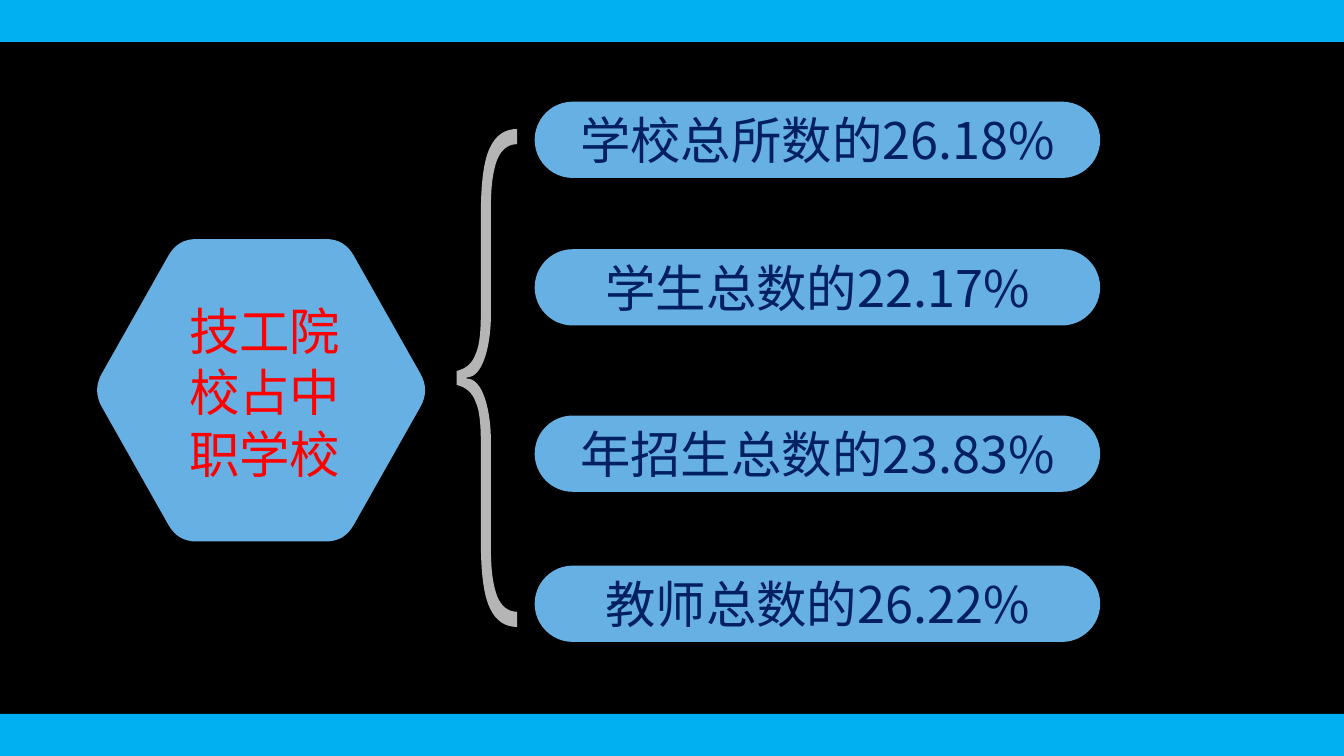
import lxml.etree
import pptx
import pptx.dml.color
import pptx.enum.shapes
import pptx.enum.text
import pptx.oxml.ns
import pptx.util

Pt = pptx.util.Pt
qn = pptx.oxml.ns.qn
SHAPES = pptx.enum.shapes.MSO_SHAPE
SLIDE_WIDTH, SLIDE_HEIGHT = 960, 540
FONT = "Noto Sans CJK SC"
COLOURS = {
    "background": "000000",
    "bar": "00B0F0",
    "panel": "67B0E3",
    "brace": "B5B5B5",
    "topic": "FF0000",
    "share": "002060",
}
SHARES = [
    (72.6, "学校总所数的26.18%"),
    (178, "学生总数的22.17%"),
    (296.8, "年招生总数的23.83%"),
    (404, "教师总数的26.22%"),
]
# Upper half of the brace: distance from its left edge, height above its middle.
# A segment of one point is a line; one of three is a cubic curve.
BRACE_START = (7.2, 0.4)
BRACE_HALF = [
    ((19.4, 0.4), (24.5, 25), (24.5, 45.4)),
    ((24.5, 123),),
    ((24.5, 137), (26, 148), (28.8, 155.5)),
    ((31.7, 163), (36.7, 167), (43.2, 167)),
    ((43.2, 177.85),),
    ((34.6, 177.85), (28, 173.5), (23.8, 164.5)),
    ((19.4, 155.5), (17.3, 140), (17.3, 116.6)),
    ((17.3, 49),),
    ((17.3, 34), (16.6, 24), (13.7, 17.5)),
    ((11.5, 11), (7.2, 6.7), (0, 5)),
]


def rgb(name):
    return pptx.dml.color.RGBColor.from_string(COLOURS[name])


def paint(shape, colour):
    shape.shadow.inherit = False
    shape.fill.solid()
    shape.fill.fore_color.rgb = rgb(colour)
    shape.line.fill.background()


def write(shape, text, colour, **frame_values):
    frame = shape.text_frame
    for name, value in {"word_wrap": True, **frame_values}.items():
        setattr(frame, name, value)
    paragraph = frame.paragraphs[0]
    paragraph.alignment = pptx.enum.text.PP_ALIGN.CENTER
    run = paragraph.add_run()
    run.text = text
    for name, value in {"name": FONT, "size": Pt(36)}.items():
        setattr(run.font, name, value)
    run.font.color.rgb = rgb(colour)
    east_asian = lxml.etree.Element(qn("a:ea"), typeface=FONT)
    run.font._element.find(qn("a:latin")).addnext(east_asian)
    return paragraph


def between(start, end, share):
    return tuple(a + (b - a) * share for a, b in zip(start, end))


def quadratic(start, control, end):
    """Return a curve with one control point as a cubic segment."""
    return between(start, control, 2 / 3), between(end, control, 2 / 3), end


def add_outline(slide, start, segments, colour):
    """Draw a closed outline of lines and cubic curves."""
    builder = slide.shapes.build_freeform(Pt(start[0]), Pt(start[1]))
    builder.add_line_segments(
        [(Pt(x), Pt(y)) for x, y in (segment[-1] for segment in segments)])
    shape = builder.convert_to_shape()
    lines = list(shape._element.iter(qn("a:lnTo")))
    for line, segment in zip(lines, segments):
        if len(segment) == 3:
            curve = lxml.etree.Element(qn("a:cubicBezTo"))
            for x, y in segment:
                lxml.etree.SubElement(curve, qn("a:pt"), x=str(Pt(x) - shape.left),
                                      y=str(Pt(y) - shape.top))
            line.getparent().replace(line, curve)
    paint(shape, colour)


def add_bars(slide, height):
    for top in (SLIDE_HEIGHT - height, 0):
        bar = slide.shapes.add_shape(
            SHAPES.RECTANGLE, 0, Pt(top), Pt(SLIDE_WIDTH), Pt(height))
        paint(bar, "bar")


def add_topic(slide, left, top, width, height):
    """Draw the hexagon with rounded corners and its label."""
    slant, middle = 61, top + height / 2
    right, bottom = left + width, top + height
    corners = [
        (left, middle), (left + slant, top), (right - slant, top),
        (right, middle), (right - slant, bottom), (left + slant, bottom),
    ]
    segments = []
    for index, corner in enumerate(corners):
        before, after = corners[index - 1], corners[(index + 1) % len(corners)]
        start, end = between(corner, before, 0.11), between(corner, after, 0.11)
        first, second = between(start, corner, 0.5), between(corner, end, 0.5)
        crest = between(first, second, 0.5)
        segments += [(start,), quadratic(start, first, crest),
                     quadratic(crest, second, end)]
    add_outline(slide, segments[0][0], segments[1:], "panel")

    label = slide.shapes.add_textbox(
        Pt(left + 60), Pt(top + 43.2), Pt(126), Pt(131))
    paragraph = write(label, "技工院校占中职学校", "topic", margin_left=0,
                      margin_right=0, margin_top=0, margin_bottom=0)
    paragraph.line_spacing = Pt(43.7)


def add_brace(slide, left, middle):
    ends = [BRACE_START] + [segment[-1] for segment in BRACE_HALF]
    backwards = [((0, 5),)] + [
        (*reversed(segment[:-1]), start)
        for start, segment in reversed(list(zip(ends, BRACE_HALF)))]
    segments = [
        tuple((left + x, middle + side * y) for x, y in segment)
        for side, half in ((-1, BRACE_HALF), (1, backwards))
        for segment in half]
    start = (left + BRACE_START[0], middle - BRACE_START[1])
    add_outline(slide, start, segments, "brace")


def add_shares(slide, left, width, height):
    for top, text in SHARES:
        pill = slide.shapes.add_shape(
            SHAPES.ROUNDED_RECTANGLE, Pt(left), Pt(top), Pt(width), Pt(height))
        pill.adjustments[0] = 0.5
        paint(pill, "panel")
        write(pill, text, "share",
              vertical_anchor=pptx.enum.text.MSO_ANCHOR.MIDDLE)


def main():
    presentation = pptx.Presentation()
    presentation.slide_width = Pt(SLIDE_WIDTH)
    presentation.slide_height = Pt(SLIDE_HEIGHT)
    slide = presentation.slides.add_slide(presentation.slide_layouts[6])
    slide.background.fill.solid()
    slide.background.fill.fore_color.rgb = rgb("background")
    add_bars(slide, 30)
    add_topic(slide, 66, 170.8, 241, 216)
    add_brace(slide, 326.2, 270)
    add_shares(slide, 381.9, 403.9, 54.5)
    presentation.save("out.pptx")


if __name__ == "__main__":
    main()
